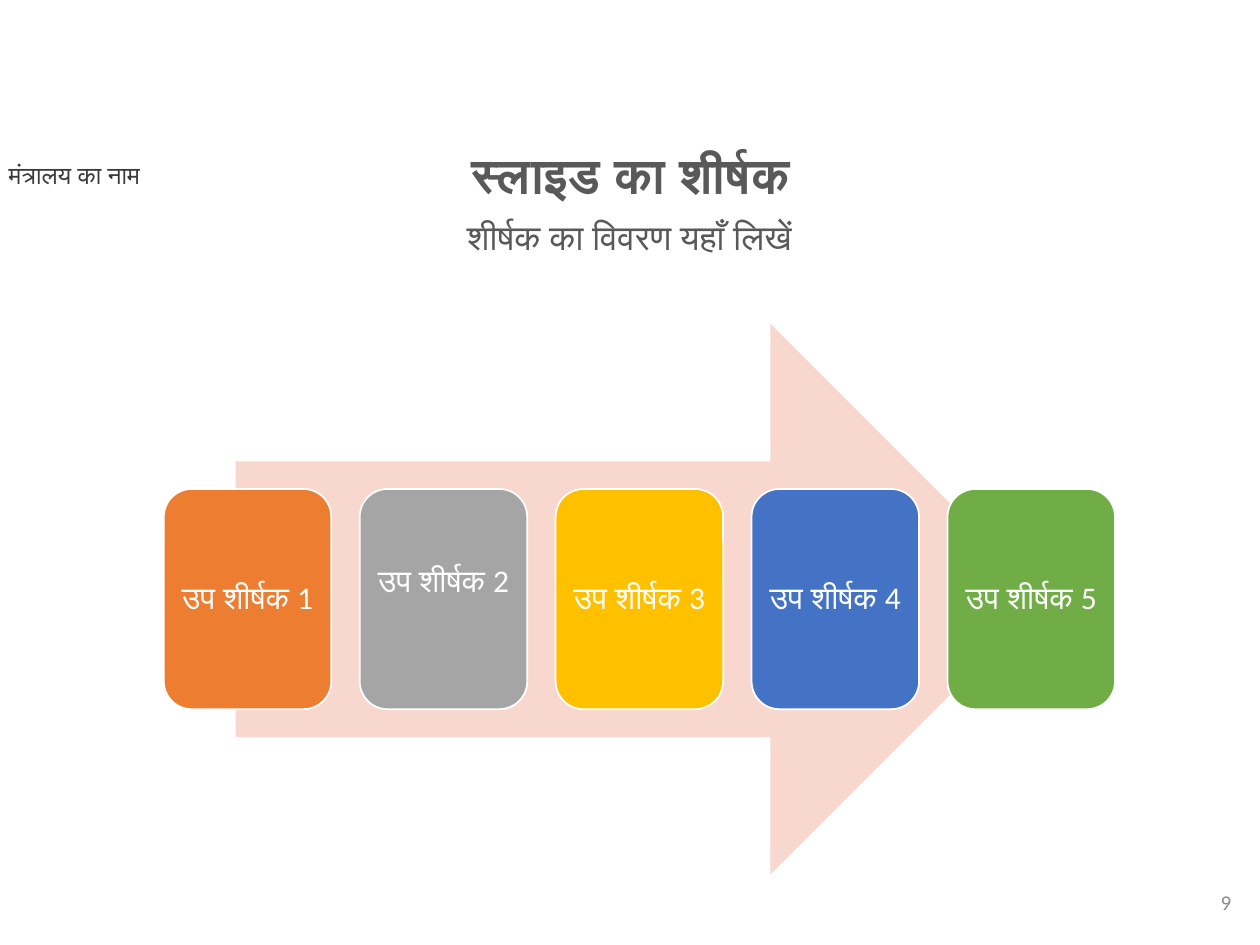
from dataclasses import dataclass
from pptx import Presentation, util as u
from pptx.dml.color import RGBColor
from pptx.enum import shapes, text

# Content: text, box, size, colour, bold, alignment, anchor
HEADS = [
    ("मंत्रालय का नाम", (-0.03, 1.22, 2.18, 0.34), "note", "dark", False, "LEFT", "TOP"),
    ("स्लाइड का शीर्षक", (1.86, 1.15, 6.29, 0.47), "title", "grey", True, "CENTER", "TOP"),
    ("शीर्षक का विवरण यहाँ लिखें", (1.46, 1.7, 7.07, 0.63), "sub", "grey", False, "CENTER", "TOP"),
    ("9", (7.62, 6.96, 2.25, 0.4), "page", "pale", False, "RIGHT", "MIDDLE"),
]
# Step label, fill, lift of the text above the middle
STEPS = [
    ("उप शीर्षक 1", "ED7D31", 0),
    ("उप शीर्षक 2", "A5A5A5", 0.13),
    ("उप शीर्षक 3", "FFC000", 0),
    ("उप शीर्षक 4", "4472C4", 0),
    ("उप शीर्षक 5", "70AD47", 0),
]


@dataclass
class Theme:
    font = "Calibri"
    cols = {"dark": "3B3838", "grey": "595959", "pale": "8C8C8C",
            "white": "FFFFFF", "arrow": "F8D7CE"}
    sizes = {"note": 14, "title": 28, "sub": 20, "page": 12, "step": 18}


# Slide and grid
WIDE, HIGH = 10, 7.5
ARROW = (1.87, 2.57, 6.43, 4.37)
LEFT, CARD, GAP = 1.3, 1.33, 0.225
TALL = ARROW[3] * 0.4
TOP = ARROW[1] + (ARROW[3] - TALL) / 2


def rgb(code):
    return RGBColor.from_string(code)


def inch(box):
    return [u.Inches(n) for n in box]


def write(frame, words, size, col, bold=False, align="CENTER", anchor="MIDDLE"):
    frame.word_wrap = True
    frame.vertical_anchor = getattr(text.MSO_ANCHOR, anchor)
    para = frame.paragraphs[0]
    para.alignment = getattr(text.PP_ALIGN, align)
    if align == "CENTER":
        para.line_spacing = 0.9
    run = para.add_run()
    run.text = words
    font = run.font
    font.name, font.bold = Theme.font, bold
    font.size = u.Pt(Theme.sizes[size])
    font.color.rgb = rgb(Theme.cols[col])


def shape(slide, kind, box, fill):
    item = slide.shapes.add_shape(kind, *inch(box))
    item.shadow.inherit = False
    item.fill.solid()
    item.fill.fore_color.rgb = rgb(fill)
    item.line.fill.background()
    return item


def main():
    deck = Presentation()
    deck.slide_width, deck.slide_height = inch((WIDE, HIGH))
    slide = deck.slides.add_slide(deck.slide_layouts[6])

    # Headings and page number
    for words, box, *style in HEADS:
        write(slide.shapes.add_textbox(*inch(box)).text_frame, words, *style)

    # Arrow behind the steps
    shape(slide, shapes.MSO_SHAPE.RIGHT_ARROW, ARROW, Theme.cols["arrow"])

    # Row of step cards
    for i, (words, fill, lift) in enumerate(STEPS):
        box = (LEFT + i * (CARD + GAP), TOP, CARD, TALL)
        card = shape(slide, shapes.MSO_SHAPE.ROUNDED_RECTANGLE, box, fill)
        card.line.color.rgb = rgb(Theme.cols["white"])
        card.line.width = u.Pt(1)
        frame = card.text_frame
        frame.margin_left = frame.margin_right = u.Inches(0.05)
        frame.margin_top = u.Inches(0.07)
        frame.margin_bottom = u.Inches(0.07 + 2 * lift)
        write(frame, words, "step", "white")

    deck.save("out.pptx")


if __name__ == "__main__":
    main()
